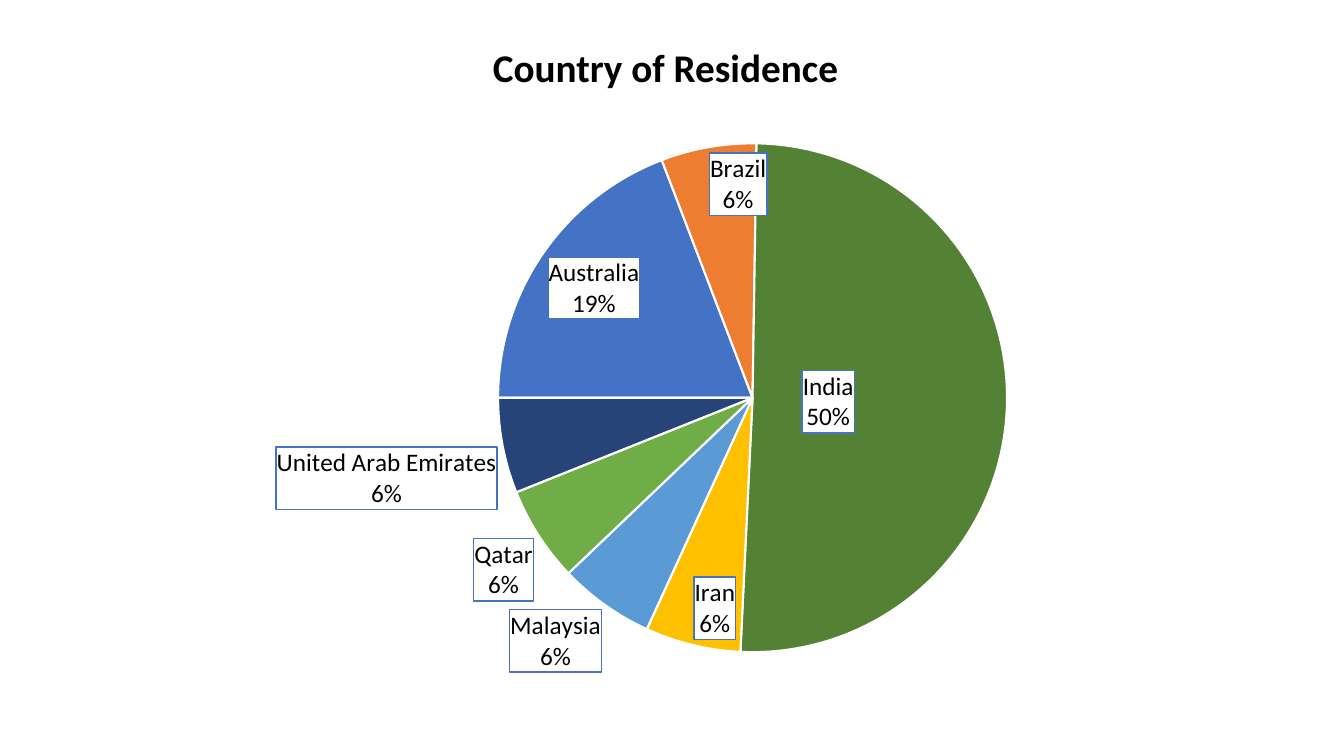
import pptx
import pptx.chart.data
import pptx.dml.color
import pptx.enum.chart
import pptx.enum.text
import pptx.oxml
import pptx.oxml.ns
import pptx.util

Inches = pptx.util.Inches
RGBColor = pptx.dml.color.RGBColor
LabelPosition = pptx.enum.chart.XL_LABEL_POSITION

FONT = "Calibri"
BLACK = RGBColor(0x00, 0x00, 0x00)
WHITE = RGBColor(0xFF, 0xFF, 0xFF)
BLUE = RGBColor(0x44, 0x72, 0xC4)
ORANGE = RGBColor(0xED, 0x7D, 0x31)
DARK_GREEN = RGBColor(0x54, 0x82, 0x35)
GOLD = RGBColor(0xFF, 0xC0, 0x00)
LIGHT_BLUE = RGBColor(0x5B, 0x9B, 0xD5)
GREEN = RGBColor(0x70, 0xAD, 0x47)
NAVY = RGBColor(0x26, 0x44, 0x78)

# Country, percentage, slice colour, label position
COUNTRIES = [
    ("Australia", 19, BLUE, LabelPosition.INSIDE_END),
    ("Brazil", 6, ORANGE, LabelPosition.INSIDE_END),
    ("India", 50, DARK_GREEN, LabelPosition.CENTER),
    ("Iran", 6, GOLD, LabelPosition.INSIDE_END),
    ("Malaysia", 6, LIGHT_BLUE, LabelPosition.OUTSIDE_END),
    ("Qatar", 6, GREEN, LabelPosition.OUTSIDE_END),
    ("United Arab Emirates", 6, NAVY, LabelPosition.OUTSIDE_END),
]


def write_text(text_frame, text, size, bold=False):
    """Fill the frame with centred black text, one paragraph a line."""
    text_frame.text = text
    for paragraph in text_frame.paragraphs:
        paragraph.alignment = pptx.enum.text.PP_ALIGN.CENTER
        for run in paragraph.runs:
            run.font.name = FONT
            run.font.size = pptx.util.Pt(size)
            run.font.bold = bold
            run.font.color.rgb = BLACK


def chart_xml(content):
    """Parse one chart element, given without its namespaces."""
    name, rest = content.split(">", 1)
    namespaces = pptx.oxml.ns.nsdecls("c", "a")
    return pptx.oxml.parse_xml(f"{name} {namespaces}>{rest}")


presentation = pptx.Presentation()
presentation.slide_width = Inches(13.33)
presentation.slide_height = Inches(7.5)
slide = presentation.slides.add_slide(presentation.slide_layouts[5])

# Pie chart
chart_data = pptx.chart.data.CategoryChartData()
chart_data.categories = [country[0] for country in COUNTRIES]
chart_data.add_series("Series 1", [country[1] for country in COUNTRIES])
chart = slide.shapes.add_chart(
    pptx.enum.chart.XL_CHART_TYPE.PIE,
    Inches(0.25), Inches(0.64), Inches(12.78), Inches(6.62), chart_data,
).chart
chart.has_title = False
chart.has_legend = False
chart.font.name = FONT
chart.font.size = pptx.util.Pt(10)
chart.font.color.rgb = BLACK

plot = chart.plots[0]
plot.vary_by_categories = True
series = plot.series[0]
labels = series.data_labels
labels.show_value = False
labels.show_category_name = True
labels.show_percentage = True
labels.font.name = FONT
labels.font.size = pptx.util.Pt(18)
labels.font.color.rgb = BLACK

for index, (country, percentage, colour, position) in enumerate(COUNTRIES):
    point = series.points[index]
    point.format.fill.solid()
    point.format.fill.fore_color.rgb = colour
    point.format.line.color.rgb = WHITE
    point.format.line.width = pptx.util.Pt(1.5)
    label = point.data_label
    label.font.name = FONT
    label.font.size = pptx.util.Pt(18)
    label.font.color.rgb = BLACK
    label.position = position
    if country == "India":
        # The rounded shares add up to 99, so this one is spelled out
        write_text(label.text_frame, f"{country}\n{percentage}%", size=18)

# Boxed labels with the country above its share
qn = pptx.oxml.ns.qn
for label in chart.element.iter(qn("c:dLbl")):
    box = chart_xml(
        f'<c:spPr><a:solidFill><a:srgbClr val="{WHITE}"/></a:solidFill>'
        f'<a:ln w="12700"><a:solidFill><a:srgbClr val="{BLUE}"/></a:solidFill></a:ln></c:spPr>'
    )
    for old_box in label.findall(qn("c:spPr")):
        label.remove(old_box)
    following = label.find(qn("c:txPr"))
    if following is None:
        following = label.find(qn("c:dLblPos"))
    following.addprevious(box)
    for flag, value in (("showVal", 0), ("showCatName", 1), ("showPercent", 1)):
        label.find(qn(f"c:{flag}")).set("val", str(value))
    label.append(chart_xml("<c:separator>\n</c:separator>"))
    if label.find(qn("c:tx")) is not None:
        label.find(qn("c:idx")).addnext(chart_xml(
            '<c:layout><c:manualLayout><c:x val="-0.04"/><c:y val="0"/>'
            "</c:manualLayout></c:layout>"
        ))

# Place the pie and turn its first slice to the left
plot_area = chart.element.find(".//" + qn("c:plotArea"))
for old_layout in plot_area.findall(qn("c:layout")):
    plot_area.remove(old_layout)
plot_area.insert(0, chart_xml(
    '<c:layout><c:manualLayout><c:layoutTarget val="inner"/>'
    '<c:xMode val="edge"/><c:yMode val="edge"/><c:x val="0.367"/><c:y val="0.118"/>'
    '<c:w val="0.395"/><c:h val="0.763"/></c:manualLayout></c:layout>'
))
pie = plot_area.find(qn("c:pieChart"))
for old_angle in pie.findall(qn("c:firstSliceAng")):
    pie.remove(old_angle)
pie.append(chart_xml('<c:firstSliceAng val="270"></c:firstSliceAng>'.replace(
    ' val="270">', ">")))
pie.find(qn("c:firstSliceAng")).set("val", "270")

# Title
title = slide.shapes.title
title.left, title.top = Inches(3.79), Inches(0.38)
title.width, title.height = Inches(5.62), Inches(0.57)
title.text_frame.word_wrap = True
title.text_frame.vertical_anchor = pptx.enum.text.MSO_ANCHOR.TOP
write_text(title.text_frame, "Country of Residence", size=28, bold=True)

presentation.save("out.pptx")
